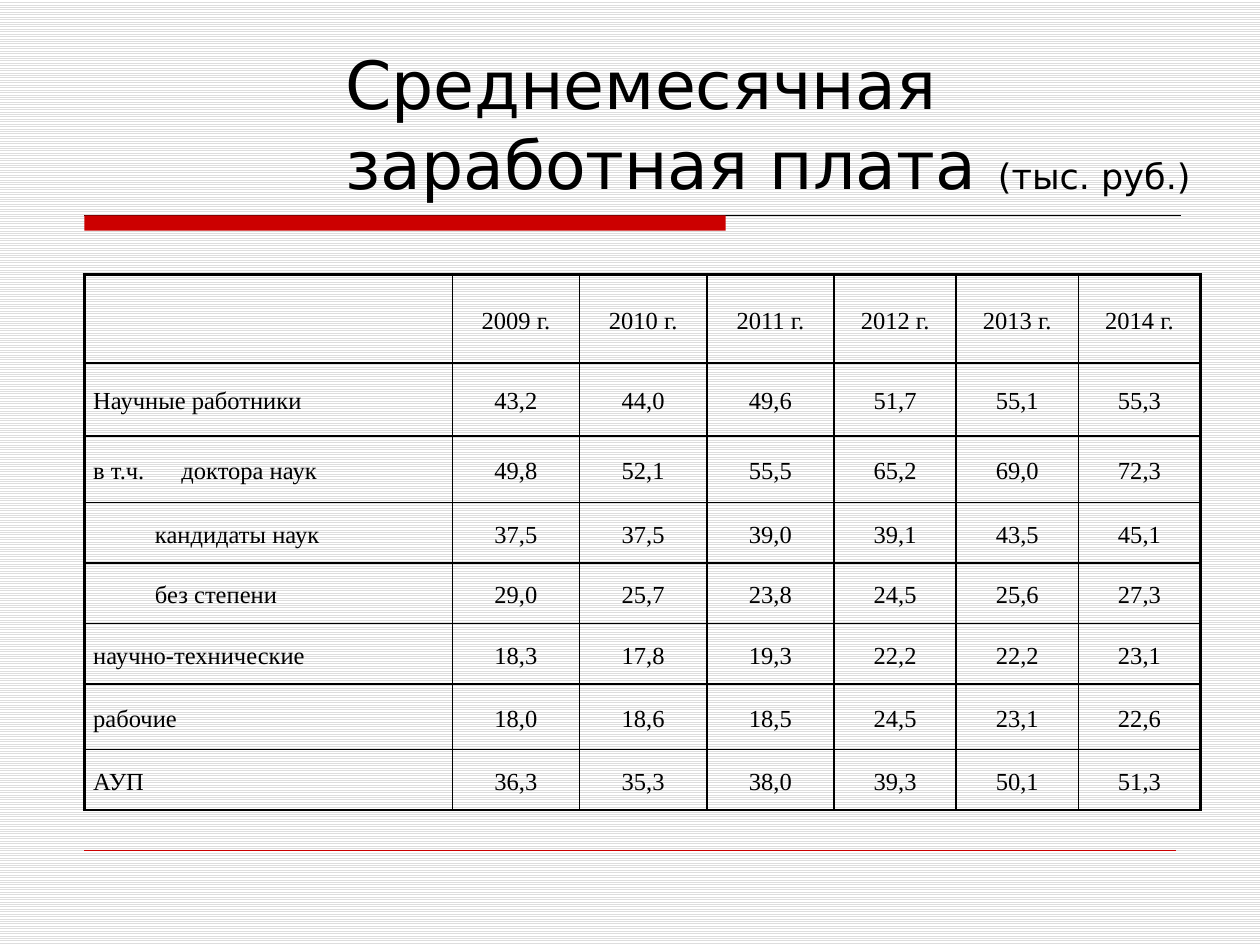
from lxml.etree import SubElement
from pptx import Presentation
from pptx.dml.color import RGBColor
from pptx.enum.dml import MSO_PATTERN
from pptx.enum.shapes import MSO_CONNECTOR, MSO_SHAPE
from pptx.enum.text import MSO_ANCHOR, PP_ALIGN
from pptx.oxml import parse_xml
from pptx.oxml.ns import nsdecls, qn
from pptx.util import Inches, Pt

BLACK, RED = "000000", "CC0000"
TITLE_FONT, TABLE_FONT = "DejaVu Sans", "Times New Roman"
THIN, THICK = 1, 2.25

COLUMN_WIDTHS = [2.92] + [1.01] * 3 + [0.97] * 3
ROW_HEIGHTS = [0.7, 0.58, 0.53, 0.48, 0.48, 0.48, 0.52, 0.48]
YEARS = range(2009, 2015)
INDENTED = {"кандидаты наук", "без степени"}
SALARIES = [
    ("Научные работники", "43,2 44,0 49,6 51,7 55,1 55,3"),
    ("в т.ч.\tдоктора наук", "49,8 52,1 55,5 65,2 69,0 72,3"),
    ("кандидаты наук", "37,5 37,5 39,0 39,1 43,5 45,1"),
    ("без степени", "29,0 25,7 23,8 24,5 25,6 27,3"),
    ("научно-технические", "18,3 17,8 19,3 22,2 22,2 23,1"),
    ("рабочие", "18,0 18,6 18,5 24,5 23,1 22,6"),
    ("АУП", "36,3 35,3 38,0 39,3 50,1 51,3"),
]


def color(value):
    return RGBColor.from_string(value)


def add_span(para, text, size, font):
    span = para.add_run()
    span.text = text
    span.font.size = Pt(size)
    span.font.name = font
    span.font.color.rgb = color(BLACK)


def add_line(page, left, right, top, line_color, width):
    line = page.shapes.add_connector(
        MSO_CONNECTOR.STRAIGHT, Inches(left), Inches(top), Inches(right), Inches(top))
    line.line.color.rgb = color(line_color)
    line.line.width = Pt(width)
    SubElement(line._element.spPr, qn("a:effectLst"))


def add_background(page):
    fill = page.background.fill
    fill.patterned()
    fill.pattern = MSO_PATTERN.LIGHT_HORIZONTAL
    fill.fore_color.rgb = color("DDDDDD")
    fill.back_color.rgb = color("FFFFFF")


def add_title_rule(page, left, top, width, height):
    """Thin rule with a thick red bar under its left part."""
    add_line(page, left, left + width, top, BLACK, 0.75)
    bar = page.shapes.add_shape(
        MSO_SHAPE.RECTANGLE, Inches(left), Inches(top), Inches(5.09), Inches(height))
    bar.shadow.inherit = False
    bar.fill.solid()
    bar.fill.fore_color.rgb = color(RED)
    bar.line.fill.background()


def add_title(page, left, top, width, height):
    box = page.shapes.add_textbox(Inches(left), Inches(top), Inches(width), Inches(height))
    frame = box.text_frame
    frame.word_wrap = True
    frame.vertical_anchor = MSO_ANCHOR.BOTTOM
    para = frame.paragraphs[0]
    add_span(para, "Среднемесячная заработная плата ", 38, TITLE_FONT)
    add_span(para, "(тыс. руб.)", 20, TITLE_FONT)


def set_borders(cell, widths):
    """Draw the sides in the order left, right, top, bottom."""
    properties = cell._tc.get_or_add_tcPr()
    for position, (side, width) in enumerate(zip("LRTB", widths)):
        properties.insert(position, parse_xml(
            f'<a:ln{side} {nsdecls("a")} w="{Pt(width)}"><a:solidFill>'
            f'<a:srgbClr val="{BLACK}"/></a:solidFill></a:ln{side}>'))


def fill_cell(cell, text, is_label, space_after):
    cell.vertical_anchor = MSO_ANCHOR.MIDDLE
    cell.margin_left = cell.margin_right = Inches(0.07)
    cell.margin_top = cell.margin_bottom = 0
    para = cell.text_frame.paragraphs[0]
    para.line_spacing = 1.15
    para.space_after = Pt(space_after)
    para.alignment = PP_ALIGN.LEFT if is_label else PP_ALIGN.CENTER
    properties = para._p.get_or_add_pPr()
    if text in INDENTED:
        properties.set("indent", str(Inches(0.49)))
    if "\t" in text:
        tabs = SubElement(properties, qn("a:tabLst"))
        SubElement(tabs, qn("a:tab"), pos=str(Inches(0.7)), algn="l")
    if text:
        add_span(para, text, 14, TABLE_FONT)


def add_salary_table(page, left, top, width, height):
    rows = [[""] + [f"{year} г." for year in YEARS]]
    rows += [[label] + values.split() for label, values in SALARIES]
    last = len(COLUMN_WIDTHS) - 1
    frame = page.shapes.add_table(
        len(rows), last + 1, Inches(left), Inches(top), Inches(width), Inches(height))
    table = frame.table
    table.first_row = table.horz_banding = False
    for column, column_width in zip(table.columns, COLUMN_WIDTHS):
        column.width = Inches(column_width)
    for r, (texts, row_height) in enumerate(zip(rows, ROW_HEIGHTS)):
        table.rows[r].height = Inches(row_height)
        for c, text in enumerate(texts):
            cell = table.cell(r, c)
            cell.fill.background()
            fill_cell(cell, text, c == 0, 10 if r and c else 0)
            set_borders(cell, [THICK if c == 0 else THIN,
                               THICK if c == last else THIN,
                               THICK if r == 0 else THIN, THIN])


def main():
    deck = Presentation()
    deck.slide_width, deck.slide_height = Inches(10), Inches(7.5)
    page = deck.slides.add_slide(deck.slide_layouts[6])
    add_background(page)
    add_title_rule(page, 0.67, 1.71, 8.7, 0.12)
    add_line(page, 0.67, 9.33, 6.75, RED, 0.25)
    add_title(page, 2.64, 0.33, 7.01, 1.33)
    add_salary_table(page, 0.67, 2.18, sum(COLUMN_WIDTHS), sum(ROW_HEIGHTS))
    deck.save("out.pptx")


if __name__ == "__main__":
    main()
